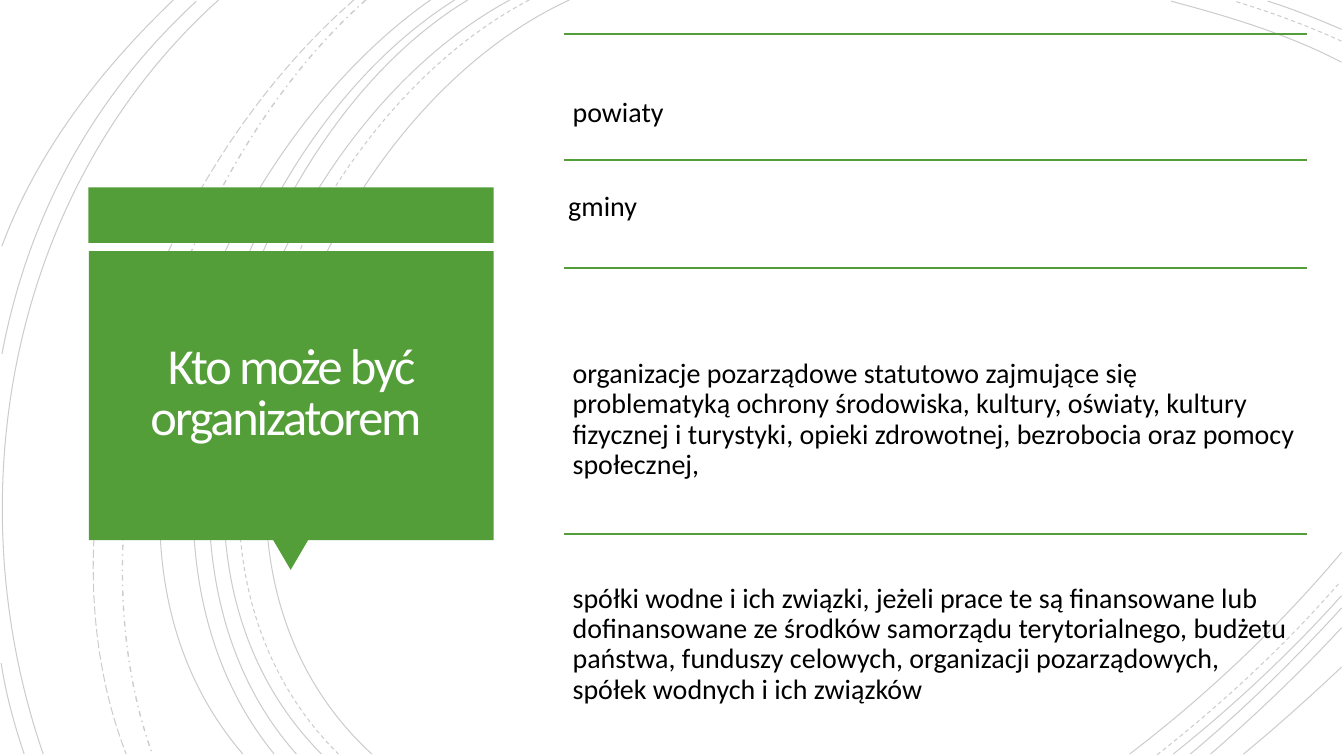
from lxml.etree import SubElement
from pptx import Presentation
from pptx.dml.color import RGBColor
from pptx.enum.dml import MSO_LINE_DASH_STYLE as Dash
from pptx.enum.shapes import MSO_CONNECTOR as Connector, MSO_SHAPE as Shape
from pptx.enum.text import MSO_ANCHOR as Anchor, PP_ALIGN as Align
from pptx.oxml.ns import qn
from pptx.util import Cm, Pt

GREEN = "549E39"


def color(hex_code):
    return RGBColor.from_string(hex_code)


def add_text(place, text, size, hex_code, insets, line_spacing, anchor):
    """Add a wrapped one-paragraph text box; place and insets are in cm."""
    box = page.shapes.add_textbox(*[Cm(length) for length in place])
    frame = box.text_frame
    frame.word_wrap = True
    frame.vertical_anchor = anchor
    frame.margin_left, frame.margin_top, frame.margin_right, frame.margin_bottom = [
        Cm(inset) for inset in insets]
    para = frame.paragraphs[0]
    para.line_spacing = line_spacing
    span = para.add_run()
    span.text = text
    span.font.name = "Calibri"
    span.font.size = Pt(size)
    span.font.color.rgb = color(hex_code)
    return para, span


deck = Presentation()
deck.slide_width, deck.slide_height = Cm(33.87), Cm(19.05)
page = deck.slides.add_slide(deck.slide_layouts[6])

# Background arcs: cubic curves as start, two control points and end (cm)
solid_arcs = [
    ((14.35, 0), (8, 2.92), (3.63, 13.72), (9.37, 19)),
    ((12.85, 0), (6.86, 3.23), (2.79, 13.64), (8.1, 19)),
    ((11.79, 0), (6.2, 3.38), (2.79, 13.74), (7.47, 19)),
    ((11.46, 0), (5.87, 3.51), (2.46, 13.54), (6.91, 19)),
    ((10.85, 0), (5.51, 3.73), (1.35, 13.44), (6.12, 19)),
    ((5.51, 0), (0.28, 4.7), (-1.17, 12.45), (1.09, 19)),
    ((4.95, 0.03), (2.34, 2.44), (0.71, 5.44), (0.05, 8.92)),
    ((4.37, 0), (2.54, 1.75), (0.94, 3.81), (0.05, 6.2)),
    ((0.03, 16.71), (0.15, 17.5), (0.36, 18.26), (0.61, 19)),
    ((33.81, 1.57), (32.46, 0.86), (30.94, 0.41), (29.51, 0.03)),
    ((33.81, 0.74), (33.2, 0.48), (32.59, 0.23), (31.95, 0.03)),
    ((28.47, 19), (30.4, 17.53), (32.23, 15.8), (33.81, 13.92)),
    ((29.57, 19), (31.06, 17.81), (32.51, 16.46), (33.81, 15.01)),
    ((30, 19), (31.34, 17.88), (32.61, 16.64), (33.81, 15.32)),
    ((30.51, 19), (31.65, 18.01), (32.77, 16.94), (33.81, 15.82)),
    ((31.34, 19), (32.18, 18.31), (32.99, 17.58), (33.81, 16.81)),
]
dashed_arcs = [
    ((13.34, 0), (7.24, 3.18), (3.12, 13.64), (8.53, 19)),
    ((33.81, 1.04), (32.94, 0.64), (32, 0.3), (31.12, 0.03)),
    ((29.16, 19.02), (30.81, 17.73), (32.39, 16.26), (33.78, 14.66)),
]
dash_dot_arcs = [((9.22, 0), (4.47, 4.22), (1.65, 12.93), (3.84, 19))]
long_dash_arcs = [((8.92, 0), (3.99, 4.29), (0.74, 12.67), (3.18, 19))]

for arcs, dash, width in [
    (solid_arcs, Dash.SOLID, 0.75),
    (dashed_arcs, Dash.DASH, 0.75),
    (dash_dot_arcs, Dash.DASH_DOT, 1),
    (long_dash_arcs, Dash.LONG_DASH, 0.75),
]:
    for arc in arcs:
        start, *others = [(Cm(x), Cm(y)) for x, y in arc]
        builder = page.shapes.build_freeform(*start)
        builder.add_line_segments(others, close=False)
        curve = builder.convert_to_shape()
        # Join the three straight segments into one cubic curve
        outline = curve._element.find(".//" + qn("a:pathLst"))[0]
        bezier = SubElement(outline, qn("a:cubicBezTo"))
        for segment in outline.findall(qn("a:lnTo")):
            bezier.append(segment[0])
            outline.remove(segment)
        curve.shadow.inherit = False
        curve.fill.background()
        curve.line.color.rgb = color("000000")
        curve.line.width = Pt(width)
        curve.line.dash_style = dash
        line_color = curve.line.fill._xPr.find(".//" + qn("a:srgbClr"))
        SubElement(line_color, qn("a:alpha"), val="20000")

# Green title callout
for kind, place, rotation in [
    (Shape.RECTANGLE, (2.23, 4.72, 10.21, 1.4), 0),
    (Shape.ISOSCELES_TRIANGLE, (6.88, 13.6, 0.89, 0.76), 180),
    (Shape.RECTANGLE, (2.24, 6.33, 10.2, 7.28), 0),
]:
    block = page.shapes.add_shape(kind, *[Cm(length) for length in place])
    block.rotation = rotation
    block.shadow.inherit = False
    block.fill.solid()
    block.fill.fore_color.rgb = color(GREEN)
    block.line.fill.background()

title_para, title_span = add_text(
    (2.46, 6.53, 9.73, 6.83), "Kto może być organizatorem ", 36, "FFFEFF",
    [0.64] * 4, 0.85, Anchor.MIDDLE)
title_para.alignment = Align.CENTER
title_span.font._element.set("spc", "-150")

# List of organisers, each under a green rule
even = (0.21, 0.21, 0.21, 0.21)
organisers = [
    (0.85, 0.86, 3.99, even, Anchor.MIDDLE, "powiaty"),
    (4.03, 4.85, 3.99, (0.1, 0, 0.2, 0), Anchor.TOP, "gminy"),
    (6.75, 8.85, 5.66, even, Anchor.TOP,
     "organizacje pozarządowe statutowo zajmujące się problematyką ochrony "
     "środowiska, kultury, oświaty, kultury fizycznej i turystyki, opieki "
     "zdrowotnej, bezrobocia oraz pomocy społecznej,"),
    (13.45, 14.51, 3.99, even, Anchor.TOP,
     "spółki wodne i ich związki, jeżeli prace te są finansowane lub "
     "dofinansowane ze środków samorządu terytorialnego, budżetu państwa, "
     "funduszy celowych, organizacji pozarządowych, spółek wodnych i ich związków"),
]
left, width = 14.22, 18.72
for rule_y, top, height, insets, anchor, text in organisers:
    rule = page.shapes.add_connector(
        Connector.STRAIGHT, Cm(left), Cm(rule_y), Cm(left + width), Cm(rule_y))
    rule.line.color.rgb = color(GREEN)
    rule.line.width = Pt(1.25)
    SubElement(rule._element.spPr, qn("a:effectLst"))
    add_text((left, top, width, height), text, 20, "000000", insets, 0.9, anchor)

deck.save("out.pptx")
